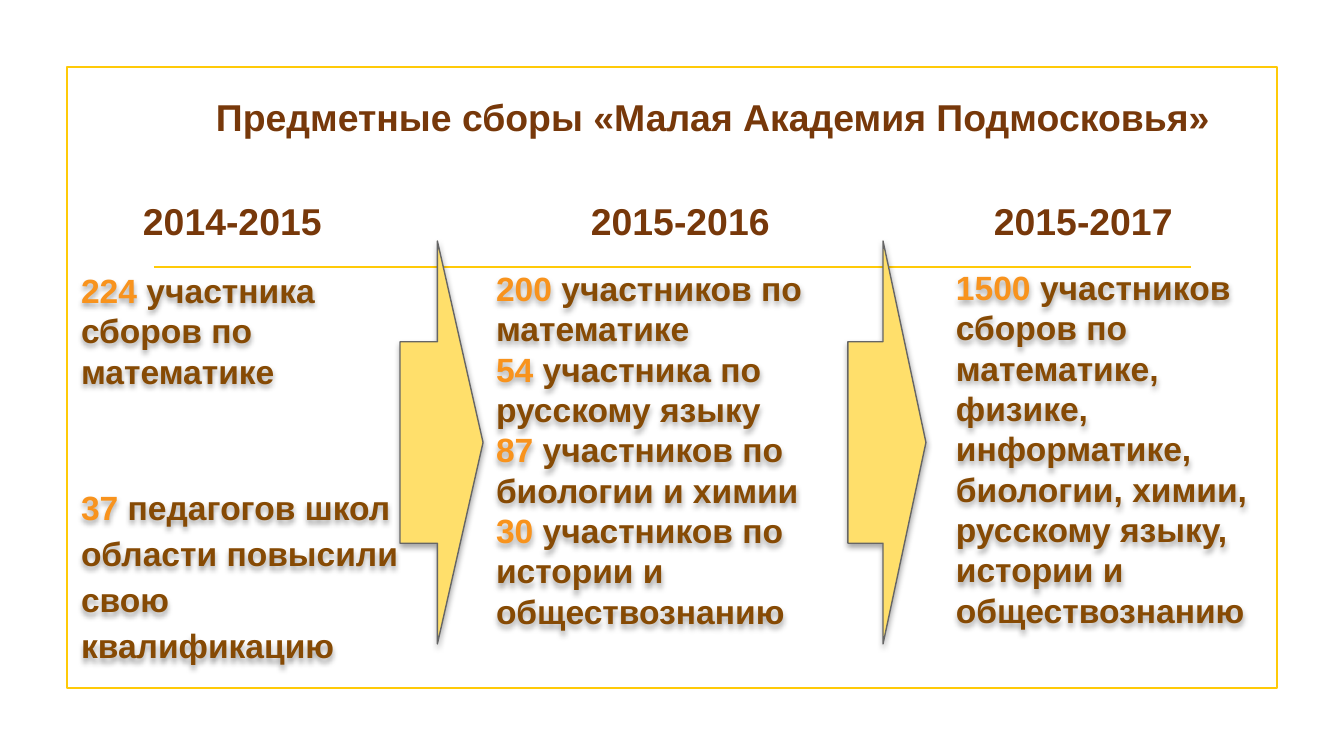
from lxml import etree
from pptx import Presentation
from pptx.dml.color import RGBColor
from pptx.enum.shapes import MSO_CONNECTOR as Connector, MSO_SHAPE as Shape
from pptx.enum.text import MSO_ANCHOR as Anchor
from pptx.oxml import parse_xml
from pptx.oxml.ns import nsdecls, qn
from pptx.util import Emu, Pt

GOLD = RGBColor(0xFF, 0xCA, 0x08)
PALE_GOLD = RGBColor(0xFF, 0xDF, 0x6B)
GREY = RGBColor(0x66, 0x66, 0x66)
RUST = RGBColor(0x77, 0x38, 0x0A)
BROWN = RGBColor(0x86, 0x4A, 0x04)
ORANGE = RGBColor(0xF8, 0x93, 0x1D)

SHADOW = (
    f'<a:effectLst {nsdecls("a")}>'
    '<a:outerShdw blurRad="40000" dist="23000" dir="5400000" rotWithShape="0">'
    '<a:srgbClr val="000000"><a:alpha val="35000"/></a:srgbClr>'
    '</a:outerShdw></a:effectLst>'
)


def px(length):
    return Emu(round(length * 914400 / 134.4))


class Painter:
    font = "Arial"
    heading_size = Pt(20)
    body_size = Pt(18)
    line_width = Pt(1.25)

    def __init__(self, page):
        self.page = page

    def add_shadow(self, shape):
        properties = shape._element.spPr
        for effects in properties.findall(qn("a:effectLst")):
            properties.remove(effects)
        properties.append(parse_xml(SHADOW))

    def frame(self, left, top, width, height):
        box = self.page.shapes.add_shape(
            Shape.RECTANGLE, px(left), px(top), px(width), px(height))
        box.shadow.inherit = False
        box.fill.background()
        box.line.color.rgb = GOLD
        box.line.width = self.line_width

    def rule(self, left, right, y):
        line = self.page.shapes.add_connector(
            Connector.STRAIGHT, px(left), px(y), px(right), px(y))
        line.line.color.rgb = GOLD
        line.line.width = self.line_width
        etree.SubElement(line._element.spPr, qn("a:effectLst"))

    def arrow(self, left, top, width, height):
        arrow = self.page.shapes.add_shape(
            Shape.RIGHT_ARROW, px(left), px(top), px(width), px(height))
        arrow.adjustments[0] = 0.5
        arrow.adjustments[1] = 0.55
        arrow.fill.solid()
        arrow.fill.fore_color.rgb = PALE_GOLD
        arrow.line.color.rgb = GREY
        arrow.line.width = Pt(0.75)
        self.add_shadow(arrow)

    def text_box(self, left, top, width, height):
        box = self.page.shapes.add_textbox(
            px(left), px(top), px(width), px(height))
        frame = box.text_frame
        frame.word_wrap = True
        frame.vertical_anchor = Anchor.TOP
        frame.margin_left = frame.margin_right = 0
        frame.margin_top = frame.margin_bottom = 0
        return box

    def set_font(self, para, size):
        para.font.name = self.font
        para.font.size = size
        para.font.bold = True

    def heading(self, left, top, width, text):
        box = self.text_box(left, top, width, 44)
        para = box.text_frame.paragraphs[0]
        para.text = text
        self.set_font(para, self.heading_size)
        para.font.color.rgb = RUST

    def results(self, left, top, width, height, items):
        """Each item is a count, its text, line pitch and space before."""
        box = self.text_box(left, top, width, height)
        self.add_shadow(box)
        frame = box.text_frame
        for index, (count, text, pitch, before) in enumerate(items):
            para = frame.paragraphs[0] if index == 0 else frame.add_paragraph()
            self.set_font(para, self.body_size)
            para.line_spacing = Pt(pitch)
            para.space_before = Pt(before)
            for words, color in ((count, ORANGE), (text, BROWN)):
                if words:
                    span = para.add_run()
                    span.text = words
                    span.font.color.rgb = color


PITCH, WIDE_PITCH = 21.6, 24.8

FIRST_YEAR = [
    ("224 ", "участника сборов по математике", PITCH, 0),
    ("37 ", "педагогов школ области повысили свою квалификацию",
     WIDE_PITCH, 48),
]
SECOND_YEAR = [
    ("200 ", "участников по математике", PITCH, 0),
    ("54 ", "участника по русскому языку", PITCH, 0),
    ("87 ", "участников по биологии и химии", PITCH, 0),
    ("30 ", "участников по истории и обществознанию", PITCH, 0),
]
THIRD_YEAR = [
    ("1500 ", "участников сборов по математике, физике, информатике, "
     "биологии, химии,", PITCH, 0),
    ("", "русскому языку, истории и обществознанию", PITCH, 0),
]


def main():
    deck = Presentation()
    deck.slide_width, deck.slide_height = px(1344), px(756)
    painter = Painter(deck.slides.add_slide(deck.slide_layouts[6]))

    # Border and dividing line
    painter.frame(67, 67, 1210, 621)
    painter.rule(154, 1191, 267)

    # Title and years
    painter.heading(216, 94, 1020, "Предметные сборы «Малая Академия Подмосковья»")
    for left, years in ((143, "2014-2015"), (591, "2015-2016"), (994, "2015-2017")):
        painter.heading(left, 198, 200, years)

    # Arrows between the years
    for left, width in ((400, 83), (848, 78)):
        painter.arrow(left, 241, width, 403)

    # Results of each year
    painter.results(81, 270, 330, 400, FIRST_YEAR)
    painter.results(496, 268, 330, 364, SECOND_YEAR)
    painter.results(956, 267, 320, 364, THIRD_YEAR)

    deck.save("out.pptx")


if __name__ == "__main__":
    main()
